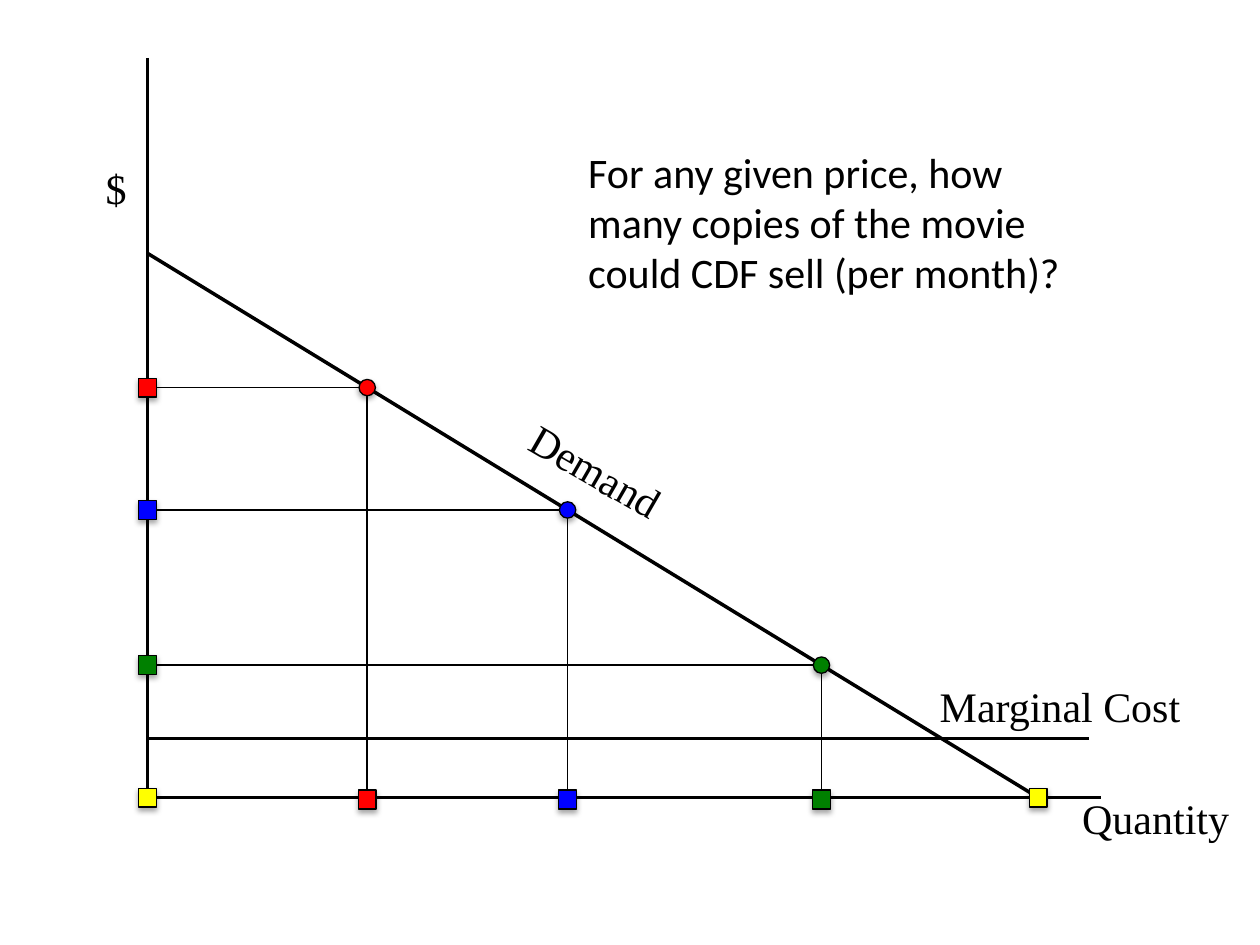
from lxml import etree
from pptx import Presentation
from pptx.dml.color import RGBColor
from pptx.enum.shapes import MSO_CONNECTOR, MSO_SHAPE
from pptx.oxml import parse_xml
from pptx.oxml.ns import nsdecls, qn
from pptx.util import Inches, Pt

deck = Presentation()
deck.slide_width, deck.slide_height = Inches(10), Inches(7.5)
slide = deck.slides.add_slide(deck.slide_layouts[6])
shapes = slide.shapes

# Grid of 100 columns by 75 rows
COL, ROW = deck.slide_width / 100, deck.slide_height / 75
BLACK, RED, BLUE, GREEN, YELLOW = "000000", "FF0000", "0000FF", "008000", "FFFF00"
SHADOW = (f'<a:effectLst {nsdecls("a")}><a:outerShdw blurRad="39370" dist="22860" '
          'dir="5400000" rotWithShape="0"><a:srgbClr val="000000">'
          '<a:alpha val="35000"/></a:srgbClr></a:outerShdw></a:effectLst>')


def draw_line(x1, y1, x2, y2, weight):
    line = shapes.add_connector(MSO_CONNECTOR.STRAIGHT, round(x1 * COL), round(y1 * ROW),
                                round(x2 * COL), round(y2 * ROW))
    line.line.color.rgb = RGBColor.from_string(BLACK)
    line.line.width = Pt(weight)
    etree.SubElement(line._element.spPr, qn("a:effectLst"))
    return line


def draw_marker(kind, x, y, width, height, color):
    """Place a shadowed marker centred on x, y."""
    marker = shapes.add_shape(kind, round((x - width / 2) * COL), round((y - height / 2) * ROW),
                              round(width * COL), round(height * ROW))
    marker.fill.solid()
    marker.fill.fore_color.rgb = RGBColor.from_string(color)
    marker.line.color.rgb = RGBColor.from_string(BLACK)
    marker.line.width = Pt(0.75)
    marker._element.spPr.append(parse_xml(SHADOW))
    return marker


# Axes, marginal cost and demand
price_axis, quantity_axis, cost = 11.7, 63.3, 58.6
demand_top, demand_end = 20.1, 82.4
slope = (quantity_axis - demand_top) / (demand_end - price_axis)
draw_line(price_axis, 4.6, price_axis, quantity_axis, 2)
draw_line(price_axis, quantity_axis, 87.4, quantity_axis, 2)
draw_line(price_axis, cost, 86.4, cost, 2)
draw_line(price_axis, demand_top, demand_end, quantity_axis, 2)

# Labels and question
for wording, left, top, width, height, font, turn in [
    ("$", 7.4, 12.4, 5.1, 5, "Times New Roman", 0),
    ("Quantity", 84.9, 62.4, 14.3, 5, "Times New Roman", 0),
    ("Marginal Cost", 73.6, 53.5, 22.6, 5, "Times New Roman", 0),
    ("Demand", 40.4, 35.9, 17.5, 5, "Times New Roman", 30),
    ("For any given price, how many copies of the movie could CDF sell (per month)?",
     45.7, 11.1, 40.8, 13.1, "Calibri", 0),
]:
    label = shapes.add_textbox(round(left * COL), round(top * ROW),
                               round(width * COL), round(height * ROW))
    label.rotation = turn
    label.text_frame.word_wrap = True
    run = label.text_frame.paragraphs[0].add_run()
    run.text = wording
    run.font.name, run.font.size = font, Pt(24)
    run.font.color.rgb = RGBColor.from_string(BLACK)

# Prices and the quantities they sell, read off the demand line
for quantity, color in [(29.15, RED), (45.05, BLUE), (65.2, GREEN)]:
    price = demand_top + slope * (quantity - price_axis)
    price_mark = draw_marker(MSO_SHAPE.RECTANGLE, price_axis, price, 1.4, 1.5, color)
    quantity_mark = draw_marker(MSO_SHAPE.RECTANGLE, quantity, 63.45, 1.4, 1.5, color)
    across = draw_line(price_axis, price, quantity, price, 1)
    across.begin_connect(price_mark, 3)
    down = draw_line(quantity, quantity_axis, quantity, price, 1)
    down.begin_connect(quantity_mark, 0)
    draw_marker(MSO_SHAPE.OVAL, quantity, price, 1.3, 1.3, color)

# Ends of the quantity axis
for quantity in (price_axis, demand_end):
    draw_marker(MSO_SHAPE.RECTANGLE, quantity, quantity_axis, 1.4, 1.5, YELLOW)

deck.save("out.pptx")
